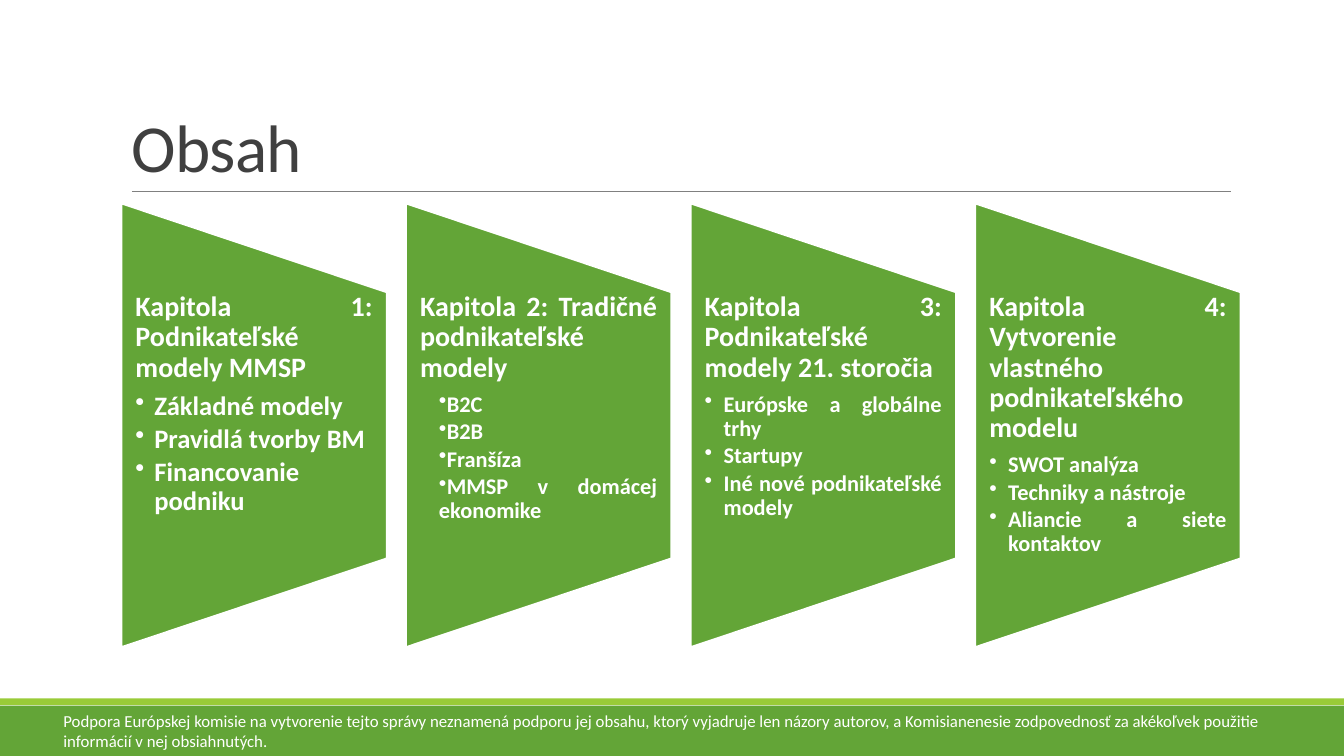
from lxml.etree import SubElement as SubEl
from pptx import Presentation
from pptx.dml.color import RGBColor as RGB
from pptx.enum.shapes import MSO_CONNECTOR as Conn, MSO_SHAPE as Kind
from pptx.enum.text import MSO_ANCHOR as Anchor, MSO_AUTO_SIZE as Auto, PP_ALIGN as Align
from pptx.oxml.ns import qn
from pptx.util import Pt

GREEN = RGB(0x63, 0xA5, 0x37)
LIME = RGB(0x99, 0xCB, 0x38)
GRAY = RGB(0x80, 0x80, 0x80)
DARK = RGB(0x40, 0x40, 0x40)
WHITE = RGB(0xFF, 0xFF, 0xFF)

LEFT, TOP, PITCH = 86.8, 208.8, 203.3
WIDE, HIGH, LONG = 189.4, 190, 316.8
HANG = 13.5

PARTS = [
    ("Kapitola 1: Podnikateľské modely MMSP", 19, -HANG,
     ["Základné modely", "Pravidlá tvorby BM", "Financovanie podniku"]),
    ("Kapitola 2: Tradičné podnikateľské modely", 16, 0,
     ["B2C", "B2B", "Franšíza", "MMSP v domácej ekonomike"]),
    ("Kapitola 3: Podnikateľské modely 21. storočia", 16, -HANG,
     ["Európske a globálne trhy", "Startupy", "Iné nové podnikateľské modely"]),
    ("Kapitola 4: Vytvorenie vlastného podnikateľského modelu", 16, -HANG,
     ["SWOT analýza", "Techniky a nástroje", "Aliancie a siete kontaktov"]),
]
NOTE = ("Podpora Európskej komisie na vytvorenie tejto správy neznamená podporu jej obsahu, "
        "ktorý vyjadruje len názory autorov, a Komisianenesie zodpovednosť za akékoľvek "
        "použitie informácií v nej obsiahnutých.")


def style(para, size, color, bold=False):
    for run in para.runs:
        font = run.font
        font.name, font.size, font.bold = "Calibri", Pt(size), bold
        font.color.rgb = color


def add_form(slide, kind, x, y, w, h, fill, edge=None):
    form = slide.shapes.add_shape(kind, Pt(x), Pt(y), Pt(w), Pt(h))
    form.shadow.inherit = False
    form.fill.solid()
    form.fill.fore_color.rgb = fill
    if edge is None:
        form.line.fill.background()
    else:
        form.line.color.rgb = edge
        form.line.width = Pt(1.25)
    return form


def add_text(slide, x, y, w, h, text):
    frame = slide.shapes.add_textbox(Pt(x), Pt(y), Pt(w), Pt(h)).text_frame
    frame.word_wrap = True
    frame.text = text
    return frame


def add_rule(slide, x, y, end):
    rule = slide.shapes.add_connector(Conn.STRAIGHT, Pt(x), Pt(y), Pt(end), Pt(y))
    rule.line.color.rgb = GRAY
    rule.line.width = Pt(0.5)
    SubEl(rule._element.spPr, qn("a:effectLst"))


def add_title(slide, text):
    title = slide.shapes.title
    title.left, title.top, title.width, title.height = Pt(86.8), Pt(22.5), Pt(792), Pt(114.2)
    frame = title.text_frame
    frame.text = text
    frame.auto_size = Auto.NONE
    frame.vertical_anchor = Anchor.BOTTOM
    para = frame.paragraphs[0]
    para.alignment = Align.LEFT
    para.line_spacing = 0.85
    style(para, 48, DARK)
    para.runs[0]._r.get_or_add_rPr().set("spc", "-50")


def set_para(para, size, after):
    para.alignment = Align.JUSTIFY
    para.line_spacing = 0.9
    para.space_after = Pt(after)
    style(para, size, WHITE, True)


def add_bullet(para, indent):
    para.level = 1
    props = para._p.get_or_add_pPr()
    props.set("marL", str(Pt(HANG)))
    props.set("indent", str(Pt(indent)))
    SubEl(props, qn("a:buChar")).set("char", "•")


def add_panel(slide, x, head, size, indent, items):
    form = add_form(slide, Kind.FLOWCHART_MANUAL_OPERATION, x + (WIDE - LONG) / 2,
                    TOP + (HIGH - WIDE) / 2, LONG, WIDE, GREEN, WHITE)
    form.rotation = 270
    frame = add_text(slide, x, TOP, WIDE, HIGH, head)
    frame.margin_left = frame.margin_right = Pt(10)
    frame.margin_top = frame.margin_bottom = Pt(0)
    set_para(frame.paragraphs[0], 20, 7)
    for item in items:
        para = frame.add_paragraph()
        para.text = item
        set_para(para, size, round(size * 0.15, 1))
        add_bullet(para, indent)


def main():
    """Build the contents slide with four chapter panels."""
    deck = Presentation()
    deck.slide_width, deck.slide_height = Pt(960), Pt(540)
    slide = deck.slides.add_slide(deck.slide_layouts[5])
    add_form(slide, Kind.RECTANGLE, 0, 504, 960, 36, GREEN)
    add_form(slide, Kind.RECTANGLE, 0, 498.8, 960, 5, LIME)
    add_rule(slide, 94.3, 136.8, 879)
    add_title(slide, "Obsah")
    for i, part in enumerate(PARTS):
        add_panel(slide, LEFT + i * PITCH, *part)
    note = add_text(slide, 38.2, 504, 885.6, 36, NOTE)
    style(note.paragraphs[0], 12, WHITE)
    deck.save("out.pptx")


if __name__ == "__main__":
    main()
